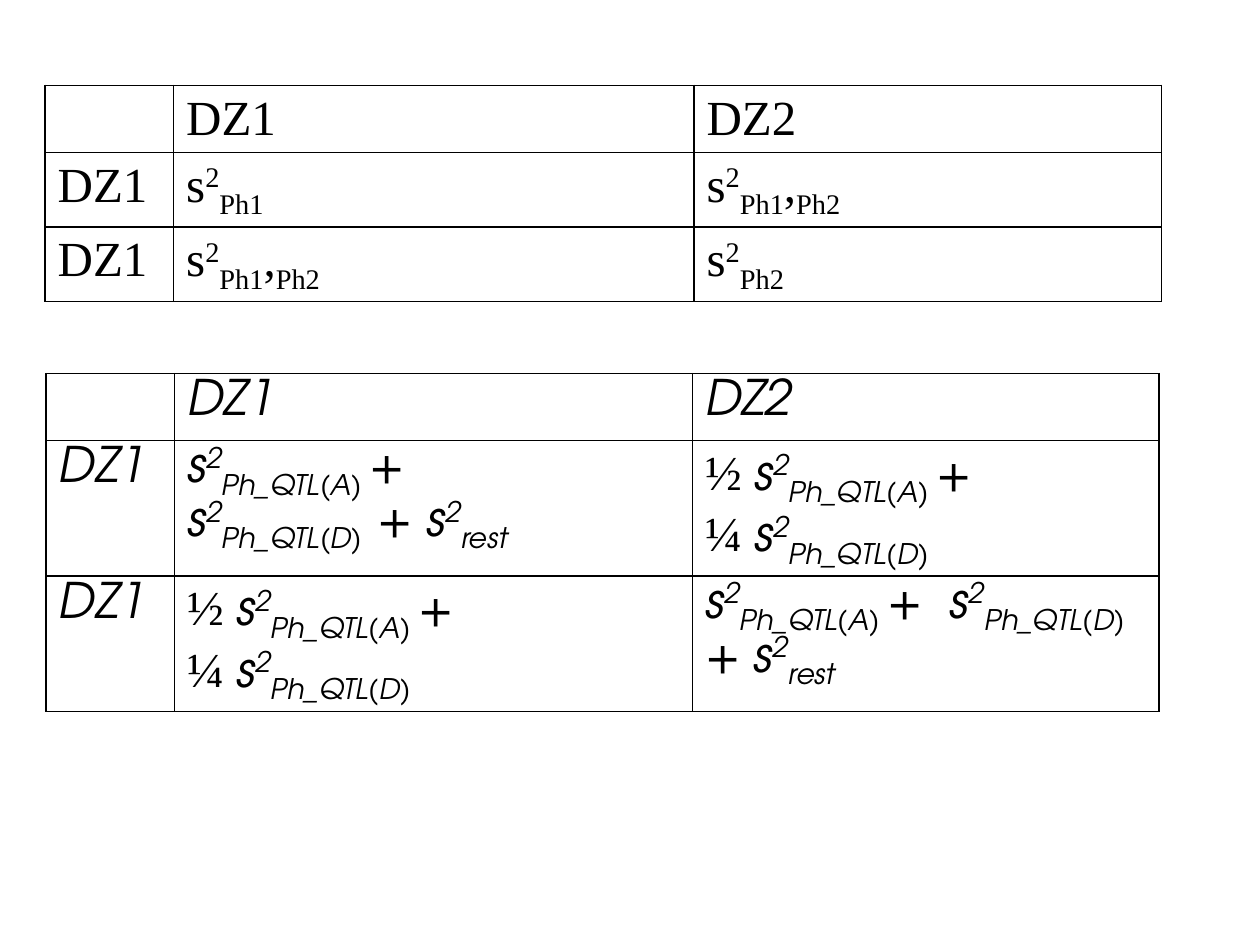
import pptx
import pptx.dml.color
import pptx.oxml
import pptx.oxml.ns
import pptx.util

Cm = pptx.util.Cm
Pt = pptx.util.Pt
BLACK = pptx.dml.color.RGBColor(0x00, 0x00, 0x00)
SERIF = "Times New Roman"
SANS = "TeX Gyre Adventor"
SUPER, SUB = 30, -25  # percent of the text size


def write_cell(cell, paragraphs, symbol_font):
    """Write paragraphs, each a list of (text, baseline) spans."""
    for index, spans in enumerate(paragraphs):
        frame = cell.text_frame
        para = frame.add_paragraph() if index else frame.paragraphs[0]
        para.font.size = Pt(28)
        para.font.color.rgb = BLACK
        has_fraction = spans[0][0][0] in "½¼"
        if not has_fraction:
            para.font.name = symbol_font
            para.font.italic = symbol_font == SANS
        for position, (text, baseline) in enumerate(spans):
            span = para.add_run()
            span.text = text
            if has_fraction:
                span.font.name = symbol_font if position else SERIF
                span.font.italic = position > 0
            if baseline:
                span._r.get_or_add_rPr().set("baseline", str(baseline * 1000))


def draw_borders(cell):
    """Give a cell a thin black line on all four sides."""
    properties = cell._tc.get_or_add_tcPr()
    for index, side in enumerate(("lnL", "lnR", "lnT", "lnB")):
        line = pptx.oxml.parse_xml(
            f'<a:{side} {pptx.oxml.ns.nsdecls("a")} w="{Pt(1)}">'
            f'<a:solidFill><a:srgbClr val="{BLACK}"/></a:solidFill></a:{side}>'
        )
        properties.insert(index, line)


deck = pptx.Presentation()
deck.slide_width = Cm(25.4)
deck.slide_height = Cm(19.05)
page = deck.slides.add_slide(deck.slide_layouts[6])

# Terms shared by the cells
header = [[], [[("DZ1", 0)]], [[("DZ2", 0)]]]
row_label = [[("DZ1", 0)]]
sigma = [("s", 0), ("2", SUPER)]
additive = sigma + [("Ph_QTL(A) ", SUB)]
dominance = sigma + [("Ph_QTL(D)", SUB)]
rest = [("  ", SUB), ("+ s", 0), ("2", SUPER), ("rest", SUB)]

# Observed variances and covariance
covariance = [sigma + [("Ph1", SUB), (",", 0), ("Ph2", SUB)]]
observed = [
    header,
    [row_label, [sigma + [("Ph1", SUB)]], covariance],
    [row_label, covariance, [sigma + [("Ph2", SUB)]]],
]

# Expected variances and covariance
shared = [
    [("½ ", 0)] + additive + [("+", 0)],
    [("¼ ", 0)] + dominance,
]
expected = [
    header,
    [row_label, [additive + [("+", 0)], dominance + rest], shared],
    [row_label, shared, [additive + [("+  s", 0)] + dominance[1:] + rest]],
]

# Both tables: contents, symbol font, left, top, column widths, row heights
layouts = [
    (observed, SERIF, 0.91, 1.72, (2.59, 10.49, 9.42), (1.35, 1.5, 1.5)),
    (expected, SANS, 0.93, 7.53, (2.59, 10.44, 9.4), (1.35, 2.72, 2.72)),
]
for contents, symbol_font, left, top, widths, heights in layouts:
    frame = page.shapes.add_table(
        len(heights), len(widths), Cm(left), Cm(top), Cm(sum(widths)), Cm(sum(heights))
    )
    table = frame.table
    table.first_row = False
    table.horz_banding = False
    for column, width in zip(table.columns, widths):
        column.width = Cm(width)
    for row, height, row_contents in zip(table.rows, heights, contents):
        row.height = Cm(height)
        for cell, paragraphs in zip(row.cells, row_contents):
            cell.fill.background()
            draw_borders(cell)
            write_cell(cell, paragraphs, symbol_font)

deck.save("out.pptx")
